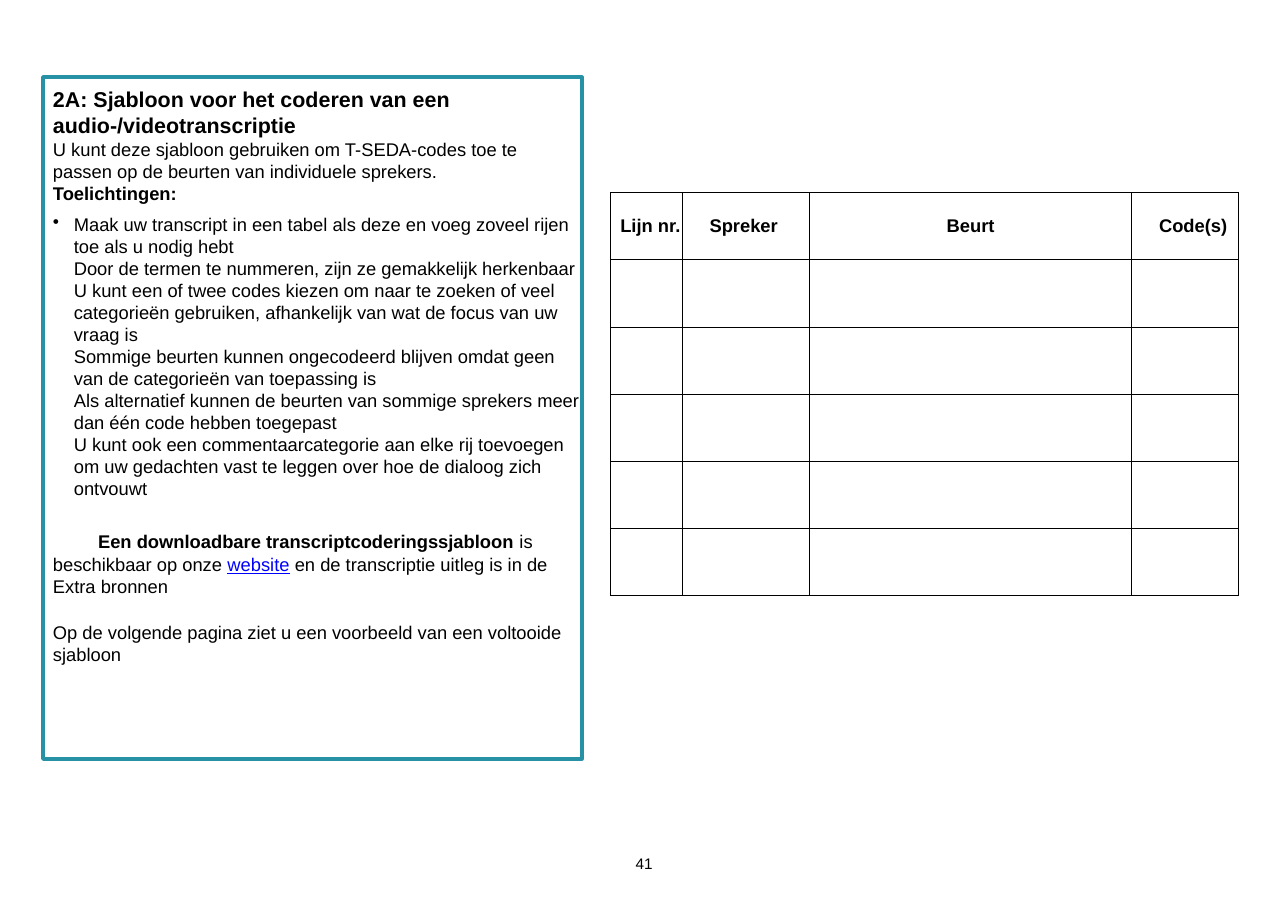
from dataclasses import dataclass

from lxml import etree
from pptx import Presentation
from pptx.dml.color import RGBColor
from pptx.enum import shapes, text
from pptx.oxml import ns
from pptx.util import Inches, Pt

BLACK = RGBColor(0x00, 0x00, 0x00)
TEAL = RGBColor(0x27, 0x91, 0xA6)
LINK_BLUE = RGBColor(0x00, 0x00, 0xFF)
FONT = "Arial"
ROW_COUNT, ROW_HEIGHT = 6, 0.61
BOX = (Inches(0.39), Inches(0.7), Inches(4.89), Inches(6.19))


@dataclass
class Span:
    text: str
    bold: bool = False
    size: float = 12
    color: RGBColor = BLACK
    underline: bool = False


@dataclass
class Para:
    spans: list[Span]
    left: float = 0.09
    indent: float = 0
    before: float = 0
    spacing: float = 1
    bullet: str = ""


@dataclass
class Column:
    heading: str
    width: float
    left: float = 0
    align: text.PP_ALIGN = text.PP_ALIGN.LEFT


TITLE = Para([Span("2A: Sjabloon voor het coderen van een audio-/videotranscriptie",
                   bold=True, size=14)])
TIPS = "\n".join([
    "Maak uw transcript in een tabel als deze en voeg zoveel rijen toe als u nodig hebt",
    "Door de termen te nummeren, zijn ze gemakkelijk herkenbaar",
    "U kunt een of twee codes kiezen om naar te zoeken of veel categorieën gebruiken, "
    "afhankelijk van wat de focus van uw vraag is",
    "Sommige beurten kunnen ongecodeerd blijven omdat geen van de categorieën "
    "van toepassing is",
    "Als alternatief kunnen de beurten van sommige sprekers meer dan één code "
    "hebben toegepast",
    "U kunt ook een commentaarcategorie aan elke rij toevoegen om uw gedachten vast "
    "te leggen over hoe de dialoog zich ontvouwt",
])
INSTRUCTIONS = [
    Para([Span("U kunt deze sjabloon gebruiken om T-SEDA-codes toe te passen op de "
               "beurten van individuele sprekers.\n"),
          Span("Toelichtingen:", bold=True)]),
    Para([Span(TIPS)], left=0.28, indent=-0.19, before=6, bullet="•"),
    Para([Span("Een downloadbare transcriptcoderingssjabloon ", bold=True),
          Span("is beschikbaar op onze "),
          Span("website", color=LINK_BLUE, underline=True),
          Span(" en de transcriptie uitleg is in de Extra bronnen")],
         indent=0.41, before=20, spacing=1.02),
    Para([Span("Op de volgende pagina ziet u een voorbeeld van een voltooide sjabloon")],
         before=15.5),
]
COLUMNS = [
    Column("Lijn nr.", 0.65, left=0.09),
    Column("Spreker", 1.16, left=0.25),
    Column("Beurt", 2.92, align=text.PP_ALIGN.CENTER),
    Column("Code(s)", 0.97, left=0.25),
]


def add_span(para, content: str, *, bold: bool = False, size: float = 12,
             color: RGBColor = BLACK, underline: bool = False) -> None:
    """Add formatted text, with a line break for each newline."""
    for number, line in enumerate(content.split("\n")):
        if number:
            para.add_line_break()
        if line:
            run = para.add_run()
            run.text = line
            font = run.font
            font.name, font.size, font.bold = FONT, Pt(size), bold
            font.underline = underline
            font.color.rgb = color


def fill_frame(frame, paras: list[Para], top: float = 0) -> None:
    frame.word_wrap = True
    frame.auto_size = text.MSO_AUTO_SIZE.NONE
    frame.vertical_anchor = text.MSO_ANCHOR.TOP
    frame.margin_left = frame.margin_right = frame.margin_bottom = 0
    frame.margin_top = Inches(top)
    for number, item in enumerate(paras):
        para = frame.add_paragraph() if number else frame.paragraphs[0]
        para.alignment = text.PP_ALIGN.LEFT
        para.space_before = Pt(item.before)
        para.line_spacing = item.spacing
        properties = para._p.get_or_add_pPr()
        properties.set("marL", str(Inches(item.left)))
        properties.set("indent", str(Inches(item.indent)))
        if item.bullet:
            etree.SubElement(properties, ns.qn("a:buChar"), char=item.bullet)
        for span in item.spans:
            add_span(para, span.text, bold=span.bold, size=span.size,
                     color=span.color, underline=span.underline)


def outline_cell(cell) -> None:
    properties = cell._tc.get_or_add_tcPr()
    for side in ("lnL", "lnR", "lnT", "lnB"):
        line = etree.SubElement(properties, ns.qn(f"a:{side}"), w=str(Pt(0.75)))
        fill = etree.SubElement(line, ns.qn("a:solidFill"))
        etree.SubElement(fill, ns.qn("a:srgbClr"), val=str(BLACK))
    cell.fill.background()


def add_coding_table(page) -> None:
    width = sum(column.width for column in COLUMNS)
    table = page.shapes.add_table(
        ROW_COUNT, len(COLUMNS), Inches(5.54), Inches(1.75),
        Inches(width), Inches(ROW_COUNT * ROW_HEIGHT)).table
    table.first_row = table.horz_banding = False
    for row in table.rows:
        row.height = Inches(ROW_HEIGHT)
    for cell in table.iter_cells():
        outline_cell(cell)
    for number, column in enumerate(COLUMNS):
        table.columns[number].width = Inches(column.width)
        cell = table.cell(0, number)
        cell.margin_left = Inches(column.left)
        cell.margin_right = cell.margin_top = cell.margin_bottom = 0
        cell.vertical_anchor = text.MSO_ANCHOR.MIDDLE
        para = cell.text_frame.paragraphs[0]
        para.alignment = column.align
        add_span(para, column.heading, bold=True)


def add_instructions(page) -> None:
    """Draw the framed box, its heading and the explanation below it."""
    left, top, width, height = BOX
    title = page.shapes.title
    title.left, title.top, title.width, title.height = left, top, width, Inches(0.55)
    fill_frame(title.text_frame, [TITLE], top=0.08)
    box = page.shapes.add_shape(shapes.MSO_SHAPE.RECTANGLE, left, top, width, height)
    box.shadow.inherit = False
    box.fill.background()
    box.line.color.rgb = TEAL
    box.line.width = Pt(2.5)
    fill_frame(box.text_frame, INSTRUCTIONS, top=0.55)


def add_page_number(page) -> None:
    box = page.shapes.add_textbox(Inches(5.74), Inches(7.75), Inches(0.21), Inches(0.18))
    fill_frame(box.text_frame, [Para([Span("41", size=10)], left=0.03)])


def main() -> None:
    deck = Presentation()
    deck.slide_width, deck.slide_height = Inches(11.69), Inches(8.27)
    page = deck.slides.add_slide(deck.slide_layouts.get_by_name("Title Only"))
    add_coding_table(page)
    add_instructions(page)
    add_page_number(page)
    deck.save("out.pptx")


if __name__ == "__main__":
    main()
